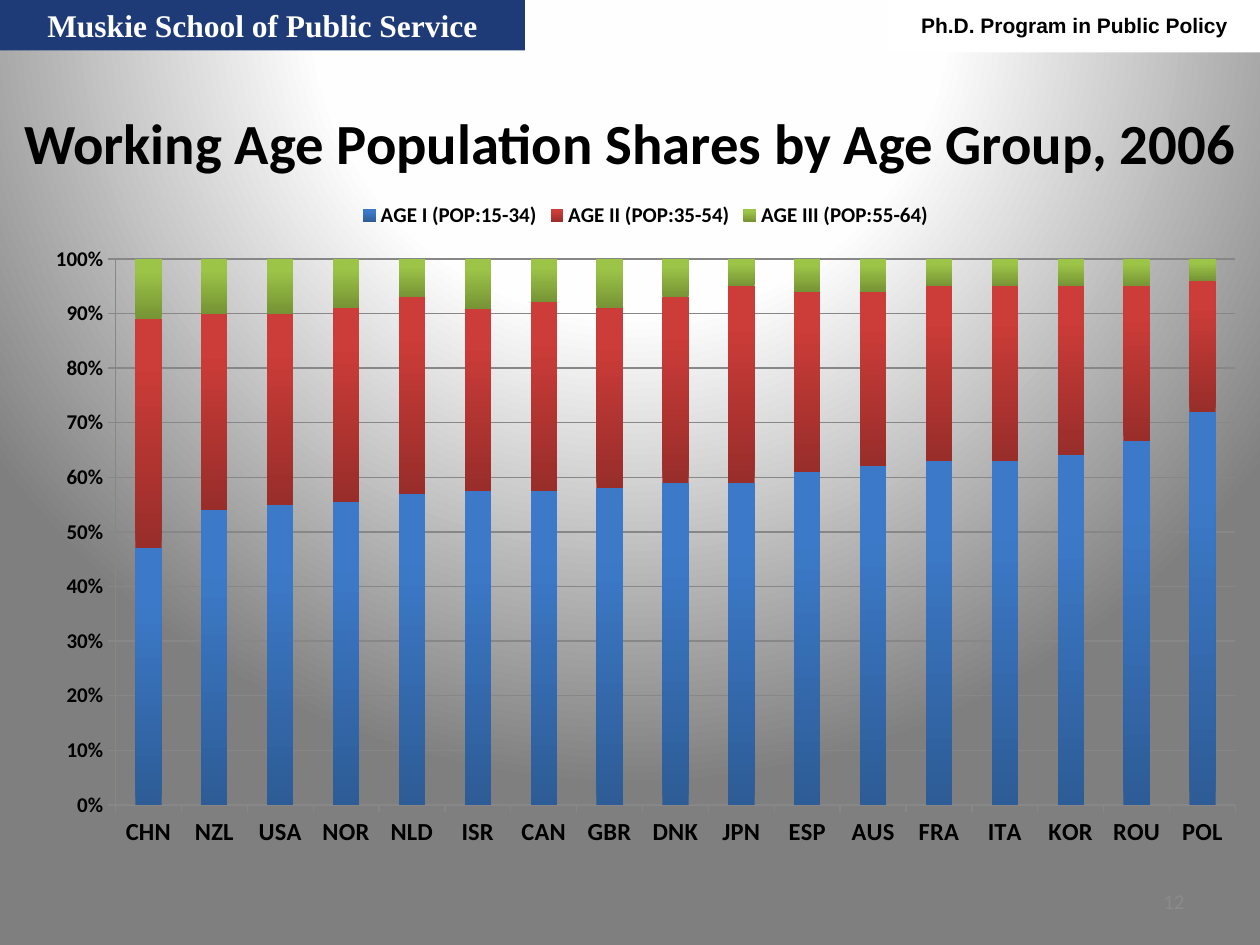
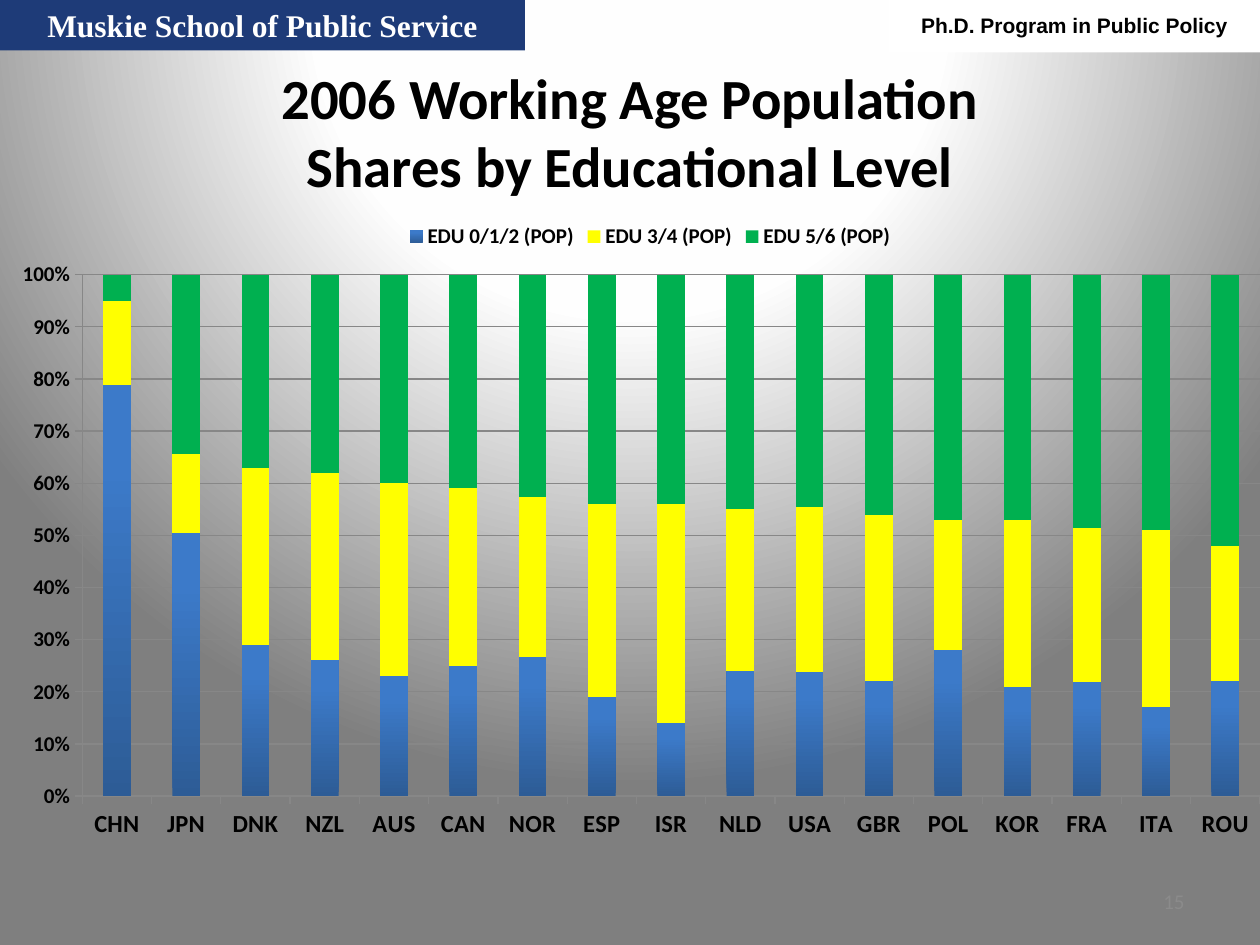
"""Build two slides of stacked charts on working age population shares."""
from dataclasses import dataclass

from pptx import Presentation
from pptx.chart.chart import Chart
from pptx.chart.data import CategoryChartData
from pptx.dml.color import RGBColor
from pptx.dml.fill import FillFormat
from pptx.enum.chart import XL_CHART_TYPE, XL_LEGEND_POSITION, XL_TICK_MARK
from pptx.enum.shapes import MSO_SHAPE
from pptx.enum.text import MSO_ANCHOR, PP_ALIGN
from pptx.oxml import parse_xml
from pptx.oxml.ns import nsdecls, qn
from pptx.slide import Slide
from pptx.text.text import TextFrame
from pptx.util import Pt

STACKED = XL_CHART_TYPE.COLUMN_STACKED_100
LEGEND_TOP = XL_LEGEND_POSITION.TOP
TICK_OUTSIDE = XL_TICK_MARK.OUTSIDE
RECTANGLE = MSO_SHAPE.RECTANGLE
TOP, MIDDLE = MSO_ANCHOR.TOP, MSO_ANCHOR.MIDDLE
CENTER, RIGHT = PP_ALIGN.CENTER, PP_ALIGN.RIGHT

BLACK = RGBColor(0x00, 0x00, 0x00)
WHITE = RGBColor(0xFF, 0xFF, 0xFF)
NAVY = RGBColor(0x1E, 0x3B, 0x78)
NUMBER_GRAY = RGBColor(0x8B, 0x8B, 0x8B)
GRID_GRAY = RGBColor(0x87, 0x87, 0x87)
DARK_BLUE, BLUE = RGBColor(0x2D, 0x5C, 0x96), RGBColor(0x3C, 0x7A, 0xC9)
DARK_RED, RED = RGBColor(0x98, 0x2D, 0x2A), RGBColor(0xCC, 0x3C, 0x38)
DARK_GREEN, LIME = RGBColor(0x76, 0x94, 0x35), RGBColor(0x9C, 0xC4, 0x47)
YELLOW = RGBColor(0xFF, 0xFF, 0x00)
GREEN = RGBColor(0x00, 0xB0, 0x50)
BACKGROUND_STOPS = ((0, WHITE), (40, RGBColor(0xFE, 0xFE, 0xFE)), (100, RGBColor(0x7F, 0x7F, 0x7F)))


@dataclass(frozen=True)
class Box:
    """A rectangle in points."""
    left: float
    top: float
    width: float
    height: float

    def lengths(self) -> tuple[Pt, Pt, Pt, Pt]:
        """Return the four lengths for python-pptx."""
        return Pt(self.left), Pt(self.top), Pt(self.width), Pt(self.height)


@dataclass(frozen=True)
class TextStyle:
    """How a block of text looks."""
    font: str
    size: float
    color: RGBColor
    bold: bool = True
    align: PP_ALIGN = CENTER
    anchor: MSO_ANCHOR = MIDDLE


@dataclass(frozen=True)
class Band:
    """A filled band at the top of each page."""
    text: str
    box: Box
    fill: RGBColor
    style: TextStyle
    inset_top: float
    wrap: bool


@dataclass(frozen=True)
class Share:
    """One series, flat or shaded from its base colour upwards."""
    name: str
    values: tuple[int, ...]
    color: RGBColor
    base: RGBColor | None = None


@dataclass(frozen=True)
class SharePage:
    """The content of one page."""
    title: str
    title_box: Box
    number: int
    chart_box: Box
    plot_box: Box
    countries: str
    shares: tuple[Share, ...]


TITLE_STYLE = TextStyle("Calibri", 32.4, BLACK)
NUMBER_STYLE = TextStyle("Calibri", 12, NUMBER_GRAY, bold=False, align=RIGHT)
NUMBER_BOX = Box(504, 500.5, 180, 28.75)
BANDS = (
    Band("Muskie School of Public Service", Box(0, 0, 300, 28.8), NAVY,
         TextStyle("Times New Roman", 18, WHITE), 3.6, False),
    Band("Ph.D. Program in Public Policy", Box(508, 0, 212, 30), WHITE,
         TextStyle("Arial", 12, BLACK, anchor=TOP), 7.2, True),
)
PAGES = (
    SharePage(
        "Working Age Population Shares by Age Group, 2006", Box(0, 36, 720, 90), 12,
        Box(18, 108, 702, 384), Box(66, 148, 640, 312),
        "CHN NZL USA NOR NLD ISR CAN GBR DNK JPN ESP AUS FRA ITA KOR ROU POL",
        (
            Share("AGE I (POP:15-34)",
                  (47, 54, 55, 56, 57, 57, 58, 58, 59, 59, 61, 62, 63, 63, 64, 66, 72), BLUE, DARK_BLUE),
            Share("AGE II (POP:35-54)",
                  (42, 36, 35, 36, 36, 33, 35, 33, 34, 36, 33, 32, 32, 32, 31, 28, 24), RED, DARK_RED),
            Share("AGE III (POP:55-64)",
                  (11, 10, 10, 9, 7, 9, 8, 9, 7, 5, 6, 6, 5, 5, 5, 5, 4), LIME, DARK_GREEN),
        )),
    SharePage(
        "2006 Working Age Population\vShares by Educational Level", Box(0, 30, 720, 90), 15,
        Box(0, 120, 743, 366), Box(47, 157, 673, 298),
        "CHN JPN DNK NZL AUS CAN NOR ESP ISR NLD USA GBR POL KOR FRA ITA ROU",
        (
            Share("EDU 0/1/2 (POP)",
                  (78, 50, 29, 26, 23, 25, 27, 19, 14, 24, 24, 22, 28, 21, 22, 17, 22), BLUE, DARK_BLUE),
            Share("EDU 3/4 (POP)",
                  (16, 15, 34, 36, 37, 34, 31, 37, 42, 31, 32, 32, 25, 32, 30, 34, 26), YELLOW),
            Share("EDU 5/6 (POP)",
                  (5, 34, 37, 38, 40, 41, 43, 44, 44, 45, 45, 46, 47, 47, 49, 49, 52), GREEN),
        )),
)


def paint_background(page: Slide) -> None:
    """Fill the page with a light circle that darkens to the edges."""
    page.background.fill.gradient()
    properties = page.element.find(".//" + qn("p:bgPr"))
    stops = "".join(f'<a:gs pos="{position * 1000}"><a:srgbClr val="{color}"/></a:gs>'
                    for position, color in BACKGROUND_STOPS)
    circle = parse_xml(
        f'<a:gradFill {nsdecls("a")} rotWithShape="1"><a:gsLst>{stops}</a:gsLst><a:path path="circle">'
        '<a:fillToRect l="50000" t="-80000" r="50000" b="180000"/></a:path></a:gradFill>')
    properties.replace(properties.find(qn("a:gradFill")), circle)


def write_text(frame: TextFrame, text: str, style: TextStyle, wrap: bool = True) -> None:
    """Put one styled paragraph in a text frame."""
    frame.word_wrap = wrap
    frame.vertical_anchor = style.anchor
    para = frame.paragraphs[0]
    para.text = text
    para.alignment = style.align
    para.font.name = style.font
    para.font.size = Pt(style.size)
    para.font.bold = style.bold
    para.font.color.rgb = style.color


def add_text(page: Slide, text: str, box: Box, style: TextStyle) -> None:
    """Add a text box."""
    write_text(page.shapes.add_textbox(*box.lengths()).text_frame, text, style)


def add_band(page: Slide, band: Band) -> None:
    """Add a filled band with its label."""
    shape = page.shapes.add_shape(RECTANGLE, *band.box.lengths())
    shape.shadow.inherit = False
    shape.fill.solid()
    shape.fill.fore_color.rgb = band.fill
    shape.line.fill.background()
    shape.text_frame.margin_top = Pt(band.inset_top)
    write_text(shape.text_frame, band.text, band.style, band.wrap)


def paint_share(fill: FillFormat, share: Share) -> None:
    """Fill the columns of one series."""
    if share.base is None:
        fill.solid()
        fill.fore_color.rgb = share.color
        return
    fill.gradient()
    fill.gradient_angle = 90
    bottom, top = fill.gradient_stops
    bottom.color.rgb, bottom.position = share.base, 0
    top.color.rgb, top.position = share.color, 0.8


def place_plot(chart: Chart, outer: Box, inner: Box) -> None:
    """Fix the inner plot area inside the chart frame."""
    places = {
        "x": (inner.left - outer.left) / outer.width,
        "y": (inner.top - outer.top) / outer.height,
        "w": inner.width / outer.width,
        "h": inner.height / outer.height,
    }
    modes = "".join(f'<c:{name}Mode val="edge"/>' for name in "xy")
    sizes = "".join(f'<c:{name} val="{value:.4f}"/>' for name, value in places.items())
    plot_area = chart.element.find(".//" + qn("c:plotArea"))
    for layout in plot_area.findall(qn("c:layout")):
        plot_area.remove(layout)
    plot_area.insert(0, parse_xml(
        f'<c:layout {nsdecls("c")}><c:manualLayout><c:layoutTarget val="inner"/>'
        f'{modes}{sizes}</c:manualLayout></c:layout>'))


def add_share_chart(page: Slide, content: SharePage) -> None:
    """Add the stacked column chart of a page."""
    data = CategoryChartData(number_format="0")
    data.categories = content.countries.split()
    for share in content.shares:
        data.add_series(share.name, share.values)
    chart = page.shapes.add_chart(STACKED, *content.chart_box.lengths(), data).chart
    chart.has_title = False
    chart.has_legend = True
    chart.legend.position = LEGEND_TOP
    chart.legend.include_in_layout = False
    category_axis, value_axis = chart.category_axis, chart.value_axis
    for font, size in ((chart.font, 10), (chart.legend.font, 12),
                       (category_axis.tick_labels.font, 14), (value_axis.tick_labels.font, 12)):
        font.name = "Calibri"
        font.size = Pt(size)
        font.bold = True
        font.color.rgb = BLACK
    value_axis.has_major_gridlines = True
    value_axis.tick_labels.number_format = "0%"
    value_axis.tick_labels.number_format_is_linked = False
    for axis in (category_axis, value_axis):
        axis.major_tick_mark = TICK_OUTSIDE
    for lines in (category_axis, value_axis, value_axis.major_gridlines):
        lines.format.line.color.rgb = GRID_GRAY
        lines.format.line.width = Pt(0.75)
    plot = chart.plots[0]
    plot.gap_width = 150
    plot.overlap = 100
    plot.vary_by_categories = False
    for series, share in zip(plot.series, content.shares):
        paint_share(series.format.fill, share)
    place_plot(chart, content.chart_box, content.plot_box)


def main() -> None:
    """Build and save the deck."""
    deck = Presentation()
    deck.slide_width, deck.slide_height = Pt(720), Pt(540)
    for content in PAGES:
        page = deck.slides.add_slide(deck.slide_layouts[6])
        paint_background(page)
        add_text(page, content.title, content.title_box, TITLE_STYLE)
        for band in BANDS:
            add_band(page, band)
        add_share_chart(page, content)
        add_text(page, str(content.number), NUMBER_BOX, NUMBER_STYLE)
    deck.save("out.pptx")


if __name__ == "__main__":
    main()
